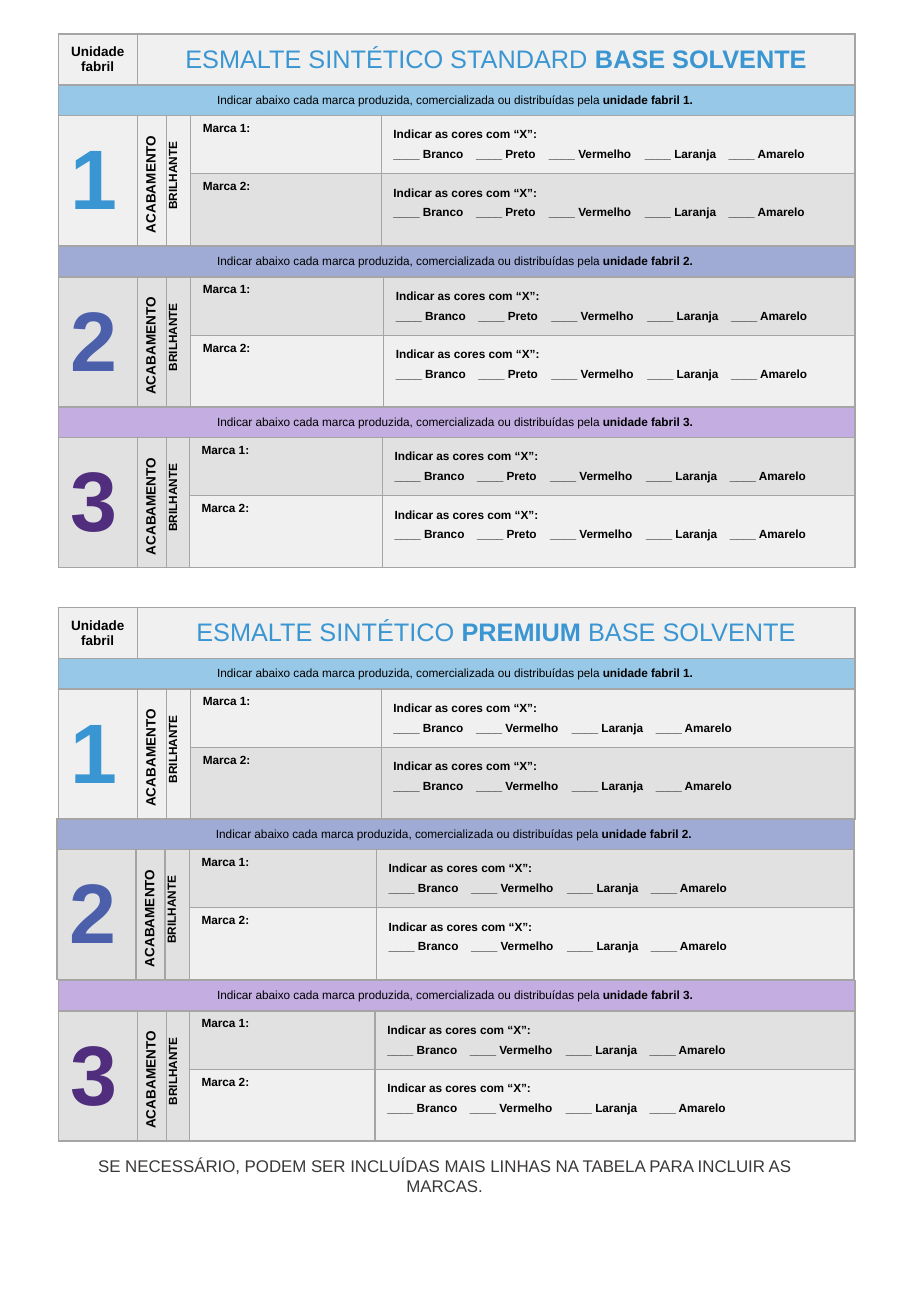
from itertools import accumulate
from pptx import Presentation
from pptx.dml.color import RGBColor
from pptx.enum.text import MSO_ANCHOR as Anchor, MSO_AUTO_SIZE as Auto, PP_ALIGN as Align
from pptx.oxml.ns import qn
from pptx.util import Inches, Pt
from lxml.etree import SubElement

BLACK = RGBColor(0x00, 0x00, 0x00)
GRAY = RGBColor(0x3B, 0x38, 0x38)
LINE = RGBColor(0xA5, 0xA5, 0xA5)
PALE = RGBColor(0xF0, 0xF0, 0xF0)
DARK = RGBColor(0xE1, 0xE1, 0xE1)
BLUE = RGBColor(0x3A, 0x96, 0xD2)

# Band colour, number colour and the fills of the two brand rows, per unit
UNITS = [
    (RGBColor(0x98, 0xC8, 0xE8), BLUE, (PALE, DARK)),
    (RGBColor(0x9F, 0xAB, 0xD5), RGBColor(0x4B, 0x5F, 0xAB), (DARK, PALE)),
    (RGBColor(0xC3, 0xAD, 0xE1), RGBColor(0x50, 0x2D, 0x7D), (DARK, PALE)),
]
# Room in inches for each paint and its blank
PAINTS = {"Branco": 0.68, "Preto": 0.6, "Vermelho": 0.79, "Laranja": 0.69, "Amarelo": 0.7}
WIDTH = 6.55

STANDARD = [("ESMALTE SINTÉTICO STANDARD ", False), ("BASE SOLVENTE", True)]
PREMIUM = [("ESMALTE SINTÉTICO ", False), ("PREMIUM", True), (" BASE SOLVENTE", False)]
# Left, top, brand column width and side label width of each unit's table
STANDARD_BOXES = [(0.48, 0.28, 1.57, 0.2), (0.48, 2.03, 1.59, 0.2), (0.48, 3.35, 1.59, 0.19)]
PREMIUM_BOXES = [(0.48, 5, 1.57, 0.2), (0.47, 6.74, 1.54, 0.2), (0.48, 8.07, 1.53, 0.19)]


def write(para, runs, size, color=BLACK, align=Align.LEFT):
    para.alignment = align
    for text, bold in runs:
        run = para.add_run()
        run.text = text
        font = run.font
        font.name, font.size, font.bold = "Arial", Pt(size), bold
        font.color.rgb = color


def style(cell, fill):
    """Draw the four borders of a cell, then its fill."""
    props = cell._tc.get_or_add_tcPr()
    for side in ("lnL", "lnR", "lnT", "lnB"):
        line = SubElement(props, qn("a:" + side), w=str(Pt(1)))
        solid = SubElement(line, qn("a:solidFill"))
        SubElement(solid, qn("a:srgbClr"), val=str(LINE))
    cell.fill.solid()
    cell.fill.fore_color.rgb = fill


def label(cell, text, size, color=BLACK, align=Align.LEFT, turn=False):
    """Write one bold, vertically centred label, turned upwards if asked."""
    cell.vertical_anchor = Anchor.MIDDLE
    if turn:
        cell._tc.get_or_add_tcPr().set("vert", "vert270")
    para = cell.text_frame.paragraphs[0]
    write(para, [(text, True)], size, color, align)
    return para


def add_paints(cell, paints):
    frame = cell.text_frame
    write(frame.paragraphs[0], [("Indicar as cores com “X”:", True)], 7)
    para = frame.add_paragraph()
    write(para, [("\t".join("____ " + p for p in paints), True)], 7)
    stops = SubElement(para._p.get_or_add_pPr(), qn("a:tabLst"))
    for pos in accumulate(PAINTS[p] for p in paints[:-1]):
        SubElement(stops, qn("a:tab"), pos=str(Inches(pos)), algn="l")
    for para in frame.paragraphs:
        para.line_spacing = 1.5


def add_title(table, title):
    label(table.cell(0, 0), "Unidade fabril", 8, align=Align.CENTER)
    cell = table.cell(0, 1)
    cell.merge(table.cell(0, 4))
    cell.vertical_anchor = Anchor.MIDDLE
    write(cell.text_frame.paragraphs[0], title, 15, BLUE, Align.CENTER)


def add_band(table, row, num):
    cell = table.cell(row, 0)
    cell.merge(table.cell(row, 4))
    cell.vertical_anchor = Anchor.MIDDLE
    text = "Indicar abaixo cada marca produzida, comercializada ou distribuídas pela "
    write(cell.text_frame.paragraphs[0],
          [(text, False), (f"unidade fabril {num}. ", True)], 7, align=Align.CENTER)


def add_sides(table, row, num, color):
    """Fill the three tall cells on the left of the brand rows."""
    for col in range(3):
        table.cell(row, col).merge(table.cell(row + 1, col))
    label(table.cell(row, 0), str(num), 50, color)
    label(table.cell(row, 1), "ACABAMENTO", 8, turn=True)
    cell = table.cell(row, 2)
    cell.margin_left = cell.margin_right = Inches(0.05)
    cell.margin_top = cell.margin_bottom = 0
    para = label(cell, "BRILHANTE", 7, align=Align.CENTER, turn=True)
    para.space_before = para.space_after = Pt(4)
    para._p.get_or_add_pPr().set("marL", str(Inches(0.08)))


def add_unit(slide, box, num, paints, title=None):
    left, top, brand, side = box
    band, color, fills = UNITS[num - 1]
    heights = [0.25, 0.48, 0.59]
    shades = [band, *fills]
    if title:
        heights.insert(0, 0.42)
        shades.insert(0, PALE)
    cols = [0.65, 0.23, side, brand]
    cols.append(WIDTH - sum(cols))
    table = slide.shapes.add_table(
        len(heights), len(cols), Inches(left), Inches(top),
        Inches(WIDTH), Inches(sum(heights))).table
    table.first_row = table.horz_banding = False
    for col, width in zip(table.columns, cols):
        col.width = Inches(width)
    for row, height, shade in zip(table.rows, heights, shades):
        row.height = Inches(height)
        for cell in row.cells:
            style(cell, shade)

    if title:
        add_title(table, title)
    first = len(heights) - 2
    add_band(table, first - 1, num)
    add_sides(table, first, num, color)
    for i in range(2):
        para = table.cell(first + i, 3).text_frame.paragraphs[0]
        write(para, [(f"Marca {i + 1}:", True)], 7)
        add_paints(table.cell(first + i, 4), paints)


def add_form(slide, title, boxes, paints):
    for num, box in enumerate(boxes, 1):
        add_unit(slide, box, num, paints, title if num == 1 else None)


def add_note(slide, left, top, width, height):
    box = slide.shapes.add_textbox(Inches(left), Inches(top), Inches(width), Inches(height))
    frame = box.text_frame
    frame.word_wrap = True
    frame.auto_size = Auto.SHAPE_TO_FIT_TEXT
    text = "SE NECESSÁRIO, PODEM SER INCLUÍDAS MAIS LINHAS NA TABELA PARA INCLUIR AS MARCAS."
    write(frame.paragraphs[0], [(text, False)], 10, GRAY, Align.CENTER)


def main():
    deck = Presentation()
    deck.slide_width, deck.slide_height = Inches(7.5), Inches(10.83)
    slide = deck.slides.add_slide(deck.slide_layouts[6])
    paints = list(PAINTS)
    add_form(slide, STANDARD, STANDARD_BOXES, paints)
    add_form(slide, PREMIUM, PREMIUM_BOXES, [p for p in paints if p != "Preto"])
    add_note(slide, 0.39, 9.46, 6.54, 0.44)
    deck.save("out.pptx")


if __name__ == "__main__":
    main()
